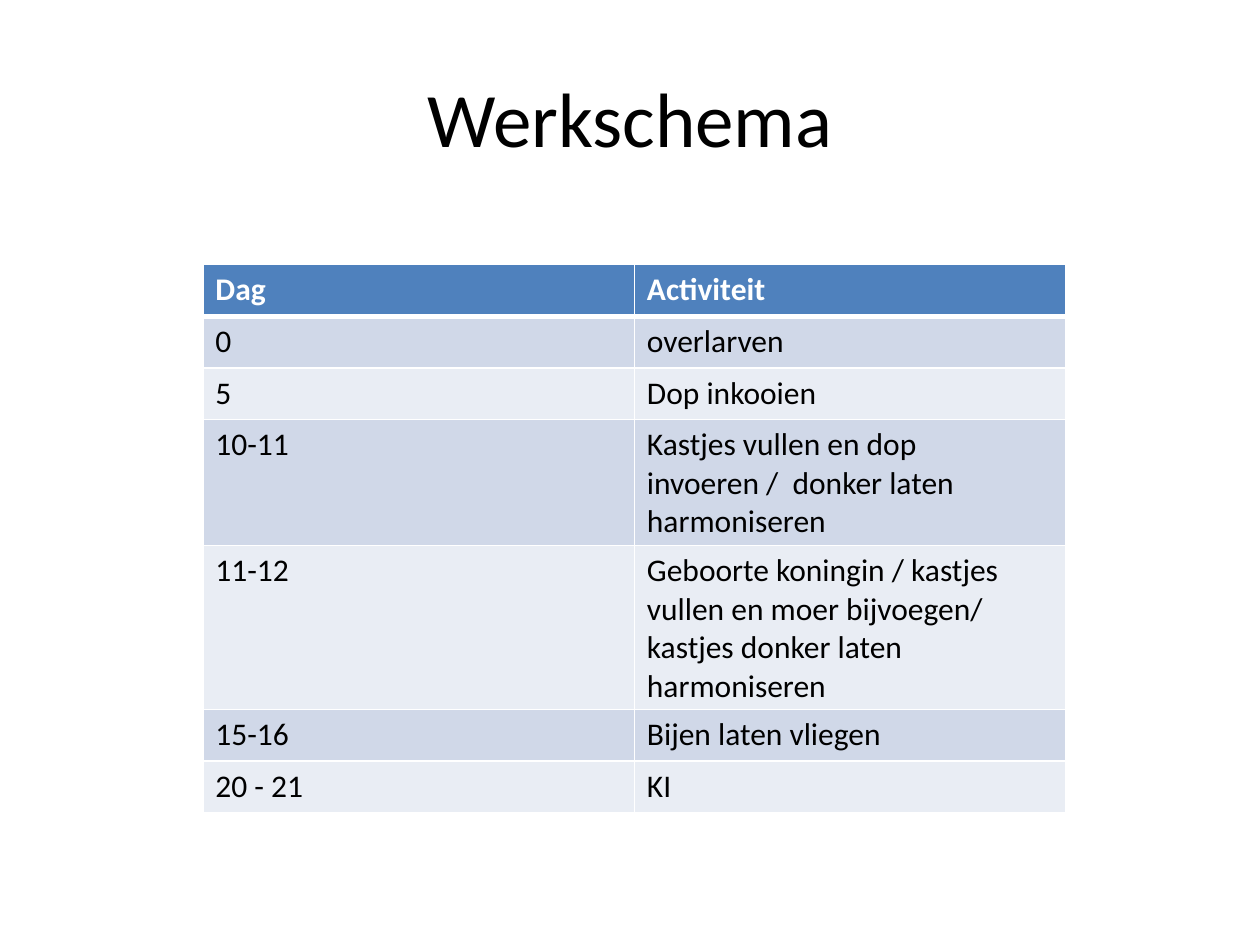
from lxml import etree
from pptx import Presentation
from pptx.dml.color import RGBColor
from pptx.enum import text
from pptx.oxml import ns
from pptx.util import Inches, Pt


def color(hex_string):
    return RGBColor.from_string(hex_string)


def add_border(cell, side, width):
    """Draw a white line on one side (L, R, T or B) of a cell, before its fill is set."""
    line = etree.SubElement(cell._tc.get_or_add_tcPr(), ns.qn(f"a:ln{side}"), w=str(Pt(width)))
    fill = etree.SubElement(line, ns.qn("a:solidFill"))
    etree.SubElement(fill, ns.qn("a:srgbClr"), val="FFFFFF")


presentation = Presentation()
presentation.slide_width = Inches(10)
presentation.slide_height = Inches(7.5)
slide = presentation.slides.add_slide(presentation.slide_layouts[6])

title = slide.shapes.add_textbox(Inches(0.5), Inches(0.3), Inches(9), Inches(1.25))
title.text_frame.word_wrap = True
title.text_frame.vertical_anchor = text.MSO_ANCHOR.MIDDLE
title.text_frame.text = "Werkschema"
paragraph = title.text_frame.paragraphs[0]
paragraph.alignment = text.PP_ALIGN.CENTER
paragraph.font.name = "Calibri"
paragraph.font.size = Pt(44)
paragraph.font.color.rgb = color("000000")

schedule = [
    ("Dag", "Activiteit"),
    ("0", "overlarven"),
    ("5", "Dop inkooien"),
    ("10-11", "Kastjes vullen en dop invoeren /  donker laten harmoniseren"),
    ("11-12", "Geboorte koningin / kastjes vullen en moer bijvoegen/ "
              "kastjes donker laten harmoniseren"),
    ("15-16", "Bijen laten vliegen"),
    ("20 - 21", "KI"),
]
row_height = Inches(0.41)
table = slide.shapes.add_table(
    len(schedule), 2, Inches(1.61), Inches(2.1), Inches(6.85), row_height * len(schedule)
).table

for row_index, row in enumerate(schedule):
    table.rows[row_index].height = row_height
    is_header = row_index == 0
    if is_header:
        fill_color = "4F81BD"
    else:
        fill_color = "D0D8E8" if row_index % 2 else "E9EDF4"
    for column_index, content in enumerate(row):
        cell = table.cell(row_index, column_index)
        for side in "LRTB":
            header_edge = (is_header and side == "B") or (row_index == 1 and side == "T")
            add_border(cell, side, 3 if header_edge else 1)
        cell.fill.solid()
        cell.fill.fore_color.rgb = color(fill_color)
        cell.text_frame.text = content
        font = cell.text_frame.paragraphs[0].runs[0].font
        font.name = "Calibri"
        font.size = Pt(18)
        font.bold = is_header
        font.color.rgb = color("FFFFFF" if is_header else "000000")

presentation.save("out.pptx")
